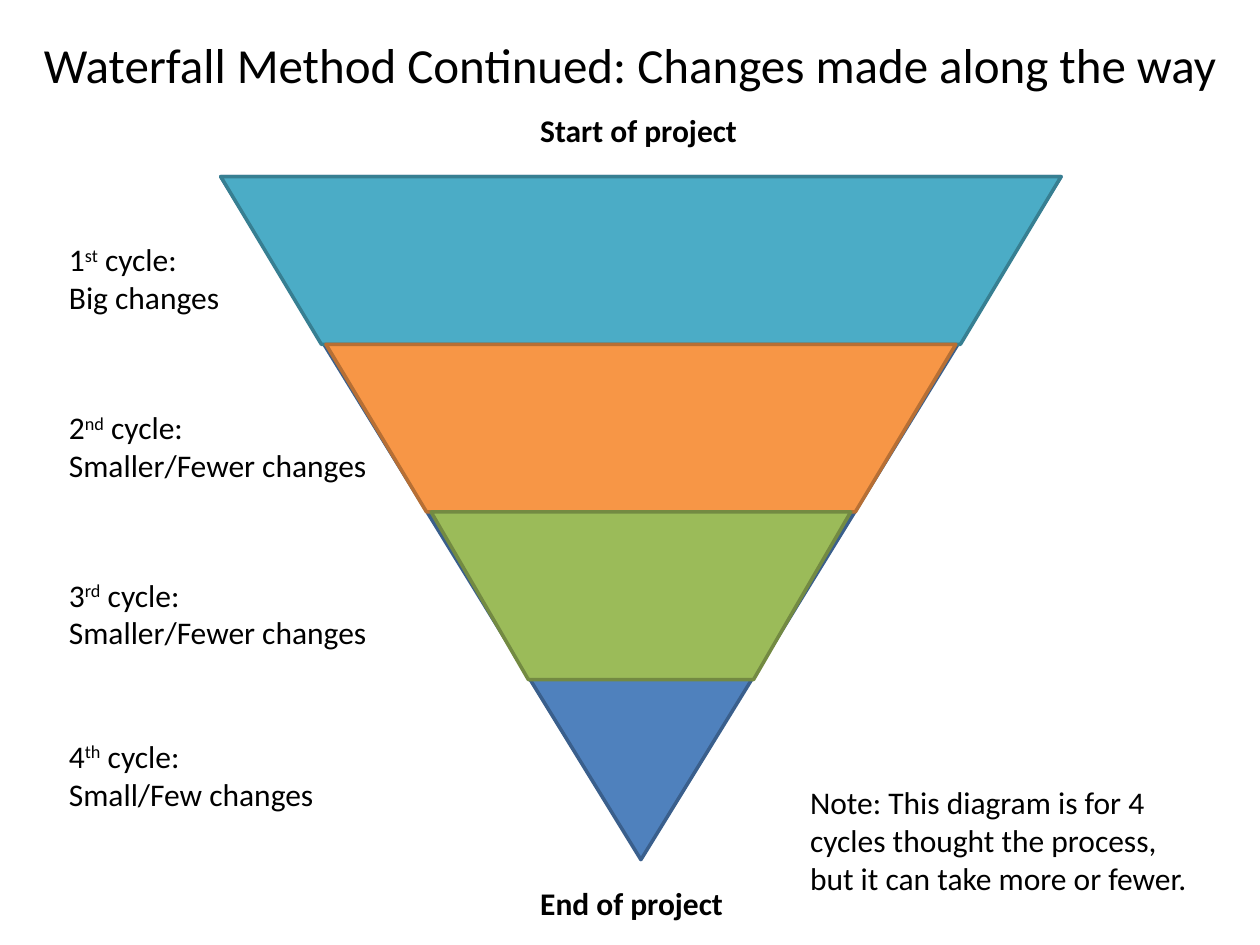
from pptx import Presentation
from pptx.dml.color import RGBColor
from pptx.enum.shapes import MSO_SHAPE
from pptx.enum.text import MSO_ANCHOR, MSO_AUTO_SIZE, PP_ALIGN
from pptx.util import Cm, Pt

TRIANGLE = MSO_SHAPE.ISOSCELES_TRIANGLE
TRAPEZOID = MSO_SHAPE.TRAPEZOID
CENTER = PP_ALIGN.CENTER
MIDDLE = MSO_ANCHOR.MIDDLE
GROW = MSO_AUTO_SIZE.SHAPE_TO_FIT_TEXT
TITLE_ONLY = 5

FUNNEL_LEFT, FUNNEL_TOP, FUNNEL_WIDTH, FUNNEL_HEIGHT = 4.45, 3.56, 16.94, 13.77
BAND_HEIGHT = 3.38
BAND_INSET = 2.12
BANDS = [
    ("4BACC6", "377F92", 0.6),
    ("F79646", "B76F34", 0.6),
    ("9BBB59", "738A42", 0.58),
]
CYCLES = [
    (4.72, 3.58, "1", "st", "Big changes"),
    (8.1, 6.58, "2", "nd", "Smaller/Fewer changes"),
    (11.48, 6.58, "3", "rd", "Smaller/Fewer changes"),
    (14.73, 5.51, "4", "th", "Small/Few changes"),
]


def color(value):
    return RGBColor.from_string(value)


def add_text(para, text, size=18, bold=False, raised=False):
    span = para.add_run()
    span.text = text
    span.font.name = "Calibri"
    span.font.size = Pt(size)
    span.font.bold = bold
    span.font.color.rgb = color("000000")
    if raised:
        span._r.get_or_add_rPr().set("baseline", "30000")


class FunnelPage:
    """Hold the slide and draw each kind of element in its style."""

    def __init__(self, deck):
        self.page = deck.slides.add_slide(deck.slide_layouts[TITLE_ONLY])

    def title(self, text, left, top, width, height):
        box = self.page.shapes.title
        box.left, box.top, box.width, box.height = map(Cm, (left, top, width, height))
        box.text_frame.vertical_anchor = MIDDLE
        para = box.text_frame.paragraphs[0]
        para.alignment = CENTER
        add_text(para, text, size=28)

    def label(self, left, top, width, height, wrap=False):
        box = self.page.shapes.add_textbox(*map(Cm, (left, top, width, height)))
        box.text_frame.word_wrap = wrap
        box.text_frame.auto_size = GROW
        return box.text_frame

    def cycle(self, top, width, number, suffix, change):
        frame = self.label(1.14, top, width, 1.8)
        heading = frame.paragraphs[0]
        add_text(heading, number)
        add_text(heading, suffix, raised=True)
        add_text(heading, " cycle:")
        add_text(frame.add_paragraph(), change)

    def layer(self, kind, left, top, width, height, fill, line, slope=None):
        shape = self.page.shapes.add_shape(kind, *map(Cm, (left, top, width, height)))
        shape.rotation = 180
        shape.shadow.inherit = False
        shape.fill.solid()
        shape.fill.fore_color.rgb = color(fill)
        shape.line.color.rgb = color(line)
        shape.line.width = Pt(2)
        if slope is not None:
            shape.adjustments[0] = slope


def main():
    deck = Presentation()
    deck.slide_width, deck.slide_height = Cm(25.4), Cm(19.05)
    funnel = FunnelPage(deck)
    funnel.title("Waterfall Method Continued: Changes made along the way", 0, 0.05, 25.4, 2.49)

    funnel.layer(TRIANGLE, FUNNEL_LEFT, FUNNEL_TOP, FUNNEL_WIDTH, FUNNEL_HEIGHT, "4F81BD", "3A5F8C")
    for index, (fill, line, slope) in enumerate(BANDS):
        inset = index * BAND_INSET
        funnel.layer(TRAPEZOID, FUNNEL_LEFT + inset, FUNNEL_TOP + index * BAND_HEIGHT,
                     FUNNEL_WIDTH - 2 * inset, BAND_HEIGHT, fill, line, slope)

    for cycle in CYCLES:
        funnel.cycle(*cycle)
    for text, top, width in (("Start of project", 2.11, 4.52), ("End of project", 17.7, 4.24)):
        add_text(funnel.label(10.64, top, width, 1.02).paragraphs[0], text, bold=True)
    note = funnel.label(16.08, 15.67, 8.26, 2.57, wrap=True)
    add_text(note.paragraphs[0],
             "Note: This diagram is for 4 cycles thought the process, but it can take more or fewer.")
    deck.save("out.pptx")


if __name__ == "__main__":
    main()
